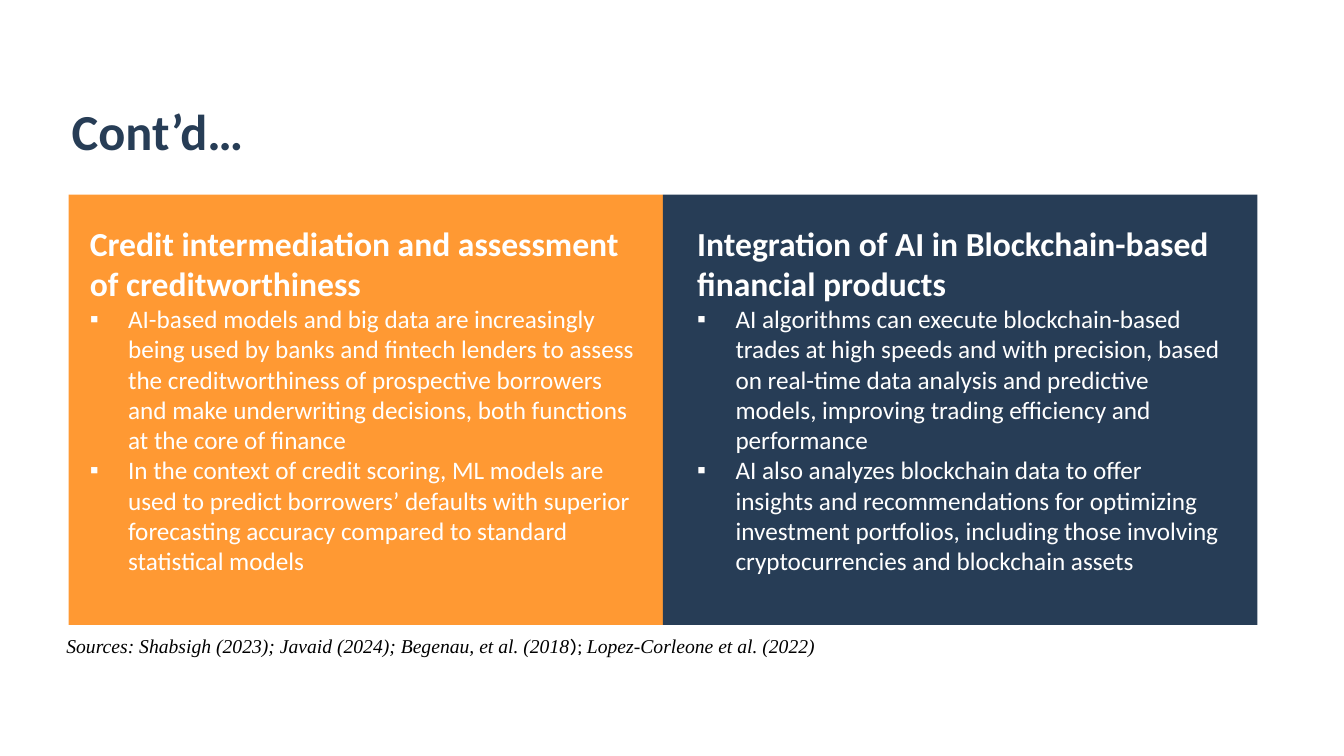
import lxml.etree
import pptx
import pptx.dml.color
import pptx.enum.shapes
import pptx.enum.text
import pptx.oxml.ns
import pptx.util

ORANGE = pptx.dml.color.RGBColor(0xFF, 0x99, 0x33)
NAVY = pptx.dml.color.RGBColor(0x27, 0x3D, 0x56)
WHITE = pptx.dml.color.RGBColor(0xFF, 0xFF, 0xFF)
BLACK = pptx.dml.color.RGBColor(0x00, 0x00, 0x00)

SLIDE_WIDTH = pptx.util.Inches(13.33)
SLIDE_HEIGHT = pptx.util.Inches(7.5)
COLUMN = SLIDE_WIDTH / 100
ROW = SLIDE_HEIGHT / 100

TITLE_BOX = (4.58, 12.27, 79.82, 10.93)
PANELS_BOX = (5.1, 25.73, 88.45, 56.93)
SOURCES_BOX = (4.2, 83.2, 89.5, 4.53)
TEXT_TOP = 3.07
TEXT_HEIGHT = 49.33
BULLET_INDENT = pptx.util.Inches(0.38)

TITLE_FORMAT = {"name": "Calibri", "size": pptx.util.Pt(36), "bold": True}
HEADING_FORMAT = {"name": "Calibri", "size": pptx.util.Pt(24), "bold": True}
BULLET_FORMAT = {"name": "Calibri", "size": pptx.util.Pt(18), "bold": False}
CITATION_FORMAT = {"name": "Times New Roman", "size": pptx.util.Pt(14), "italic": True}
SEPARATOR_FORMAT = {"name": "Karla", "size": pptx.util.Pt(14), "italic": False}

PANELS = [
    (
        ORANGE,
        0.83,
        "Credit intermediation and assessment of creditworthiness",
        [
            "AI-based models and big data are increasingly being used by banks and fintech "
            "lenders to assess the creditworthiness of prospective borrowers and make "
            "underwriting decisions, both functions at the core of finance",
            "In the context of credit scoring, ML models are used to predict borrowers’ "
            "defaults with superior forecasting accuracy compared to standard statistical models",
        ],
    ),
    (
        NAVY,
        1.8,
        "Integration of AI in Blockchain-based financial products",
        [
            "AI algorithms can execute blockchain-based trades at high speeds and with "
            "precision, based on real-time data analysis and predictive models, improving "
            "trading efficiency and performance",
            "AI also analyzes blockchain data to offer insights and recommendations for "
            "optimizing investment portfolios, including those involving cryptocurrencies "
            "and blockchain assets",
        ],
    ),
]

SOURCES = [
    ("Sources: Shabsigh (2023); Javaid (2024); Begenau, et al. (2018", CITATION_FORMAT),
    ("); ", SEPARATOR_FORMAT),
    ("Lopez-Corleone et al. (2022)", CITATION_FORMAT),
]


def to_lengths(box):
    """Turn a box in grid columns and rows into slide lengths."""
    left, top, width, height = box
    return int(left * COLUMN), int(top * ROW), int(width * COLUMN), int(height * ROW)


def place(shape, box):
    """Move and size a shape to a grid box."""
    shape.left, shape.top, shape.width, shape.height = to_lengths(box)


def format_font(font, values, color):
    """Apply a dict of format values and a color to a font."""
    for attribute, value in values.items():
        setattr(font, attribute, value)
    font.color.rgb = color


def set_bullet(paragraph, symbol=None):
    """Give a paragraph a hanging bullet, or none without a symbol."""
    properties = paragraph._p.get_or_add_pPr()
    indent = BULLET_INDENT if symbol else 0
    properties.set("marL", str(indent))
    properties.set("indent", str(-indent))
    tag = "a:buChar" if symbol else "a:buNone"
    bullet = lxml.etree.SubElement(properties, pptx.oxml.ns.qn(tag))
    if symbol:
        bullet.set("char", symbol)


def fill_title(title, box):
    """Write the slide title in its placeholder."""
    place(title, box)
    frame = title.text_frame
    frame.text = "Cont’d…"
    frame.vertical_anchor = pptx.enum.text.MSO_ANCHOR.MIDDLE
    frame.auto_size = pptx.enum.text.MSO_AUTO_SIZE.NONE
    paragraph = frame.paragraphs[0]
    paragraph.alignment = pptx.enum.text.PP_ALIGN.LEFT
    paragraph.line_spacing = 0.9
    format_font(paragraph.runs[0].font, TITLE_FORMAT, NAVY)


def add_panel(slide, body, box, color, inset, heading, points):
    """Place a colored panel behind a body placeholder with heading and bullets."""
    left, top, width, height = box
    panel = slide.shapes.add_shape(
        pptx.enum.shapes.MSO_SHAPE.RECTANGLE, *to_lengths(box)
    )
    panel.shadow.inherit = False
    panel.fill.solid()
    panel.fill.fore_color.rgb = color
    panel.line.fill.background()
    body.element.addprevious(panel.element)

    place(body, (left + inset, top + TEXT_TOP, width - 2 * inset, TEXT_HEIGHT))
    frame = body.text_frame
    frame.text = "\n".join([heading, *points])
    frame.auto_size = pptx.enum.text.MSO_AUTO_SIZE.NONE
    for index, paragraph in enumerate(frame.paragraphs):
        paragraph.space_before = pptx.util.Pt(0)
        set_bullet(paragraph, "▪" if index else None)
        values = BULLET_FORMAT if index else HEADING_FORMAT
        format_font(paragraph.runs[0].font, values, WHITE)


def add_sources(slide, box):
    """Write the line of sources below the panels."""
    text_box = slide.shapes.add_textbox(*to_lengths(box))
    text_box.text_frame.word_wrap = True
    paragraph = text_box.text_frame.paragraphs[0]
    for text, values in SOURCES:
        run = paragraph.add_run()
        run.text = text
        format_font(run.font, values, BLACK)


def build_slide(presentation):
    """Build the slide with a title, two panels and sources."""
    slide = presentation.slides.add_slide(presentation.slide_layouts[3])
    title, *bodies = slide.placeholders
    fill_title(title, TITLE_BOX)
    left, top, width, height = PANELS_BOX
    panel_width = width / len(PANELS)
    for index, (body, panel) in enumerate(zip(bodies, PANELS)):
        box = (left + index * panel_width, top, panel_width, height)
        add_panel(slide, body, box, *panel)
    add_sources(slide, SOURCES_BOX)


def main():
    """Create and save the presentation."""
    presentation = pptx.Presentation()
    presentation.slide_width = SLIDE_WIDTH
    presentation.slide_height = SLIDE_HEIGHT
    build_slide(presentation)
    presentation.save("out.pptx")


if __name__ == "__main__":
    main()
